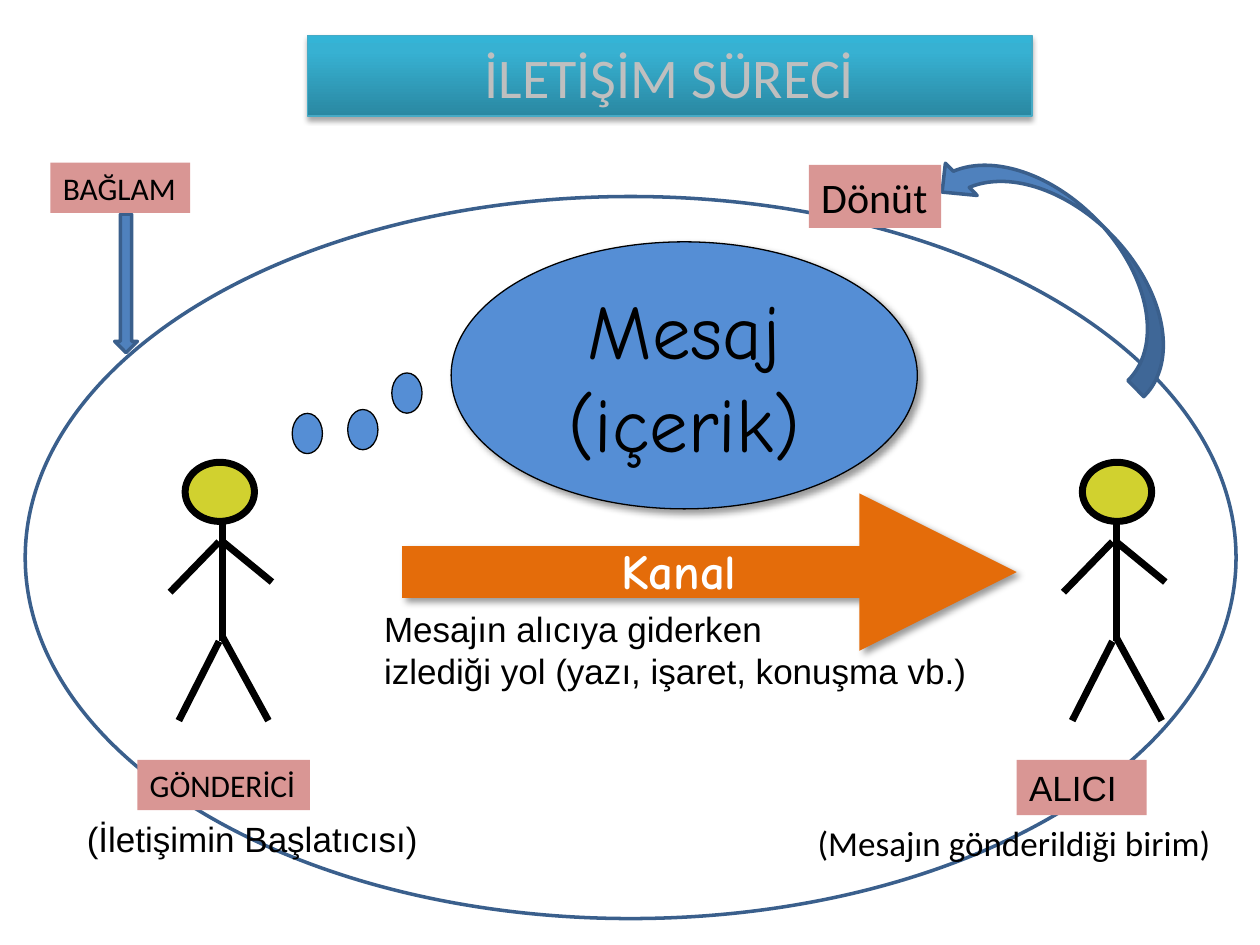
import lxml.etree
import pptx
import pptx.dml.color
import pptx.enum.dml
import pptx.enum.shapes
import pptx.enum.text
import pptx.oxml
import pptx.oxml.ns
import pptx.util

Pt = pptx.util.Pt
SHAPES = pptx.enum.shapes.MSO_SHAPE
ANCHOR = pptx.enum.text.MSO_ANCHOR
ALIGN = pptx.enum.text.PP_ALIGN
qn = pptx.oxml.ns.qn

BLACK = "000000"
PINK = "D99694"
BLUE = "558ED5"
OUTLINE = "3A5F8C"
SOFT_SHADOW = (40, 4, 3, 45)
LIMBS = [
    (0, 298, 0, 366.5),
    (0, 309.6, 28, 332.6),
    (-2.2, 309.6, -30.2, 338.4),
    (0, 364.3, 26, 411.8),
    (-2.2, 366.5, -25.2, 411.8),
]


def color(value):
    return pptx.dml.color.RGBColor.from_string(value)


def add_element(parent, tag, **attributes):
    values = {name: str(value) for name, value in attributes.items()}
    return lxml.etree.SubElement(parent, qn(tag), values)


def add_color(parent, value):
    return add_element(parent, "a:srgbClr", val=value)


def add_shadow(effects, opacity, blur, distance, angle):
    shadow = add_element(effects, "a:outerShdw", blurRad=Pt(blur), dist=Pt(distance),
                         dir=angle * 60000, rotWithShape=0)
    add_element(add_color(shadow, BLACK), "a:alpha", val=opacity * 1000)


def add_shape(slide, kind, box, fill=None, line=None, width=0.75, shadow=None):
    shape = slide.shapes.add_shape(kind, *map(Pt, box))
    shape.shadow.inherit = False
    if fill:
        shape.fill.solid()
        shape.fill.fore_color.rgb = color(fill)
    else:
        shape.fill.background()
    if line:
        shape.line.color.rgb = color(line)
        shape.line.width = Pt(width)
    else:
        shape.line.fill.background()
    if shadow:
        add_shadow(shape._element.spPr.find(qn("a:effectLst")), *shadow)
    return shape


def add_line(slide, points, line, width, arrow=False, shadow=None):
    connector = slide.shapes.add_connector(
        pptx.enum.shapes.MSO_CONNECTOR.STRAIGHT, *map(Pt, points))
    connector.line.color.rgb = color(line)
    connector.line.width = Pt(width)
    if arrow:
        add_element(connector.line._get_or_add_ln(), "a:tailEnd", type="triangle")
    effects = add_element(connector._element.spPr, "a:effectLst")
    if shadow:
        add_shadow(effects, *shadow)


def write_text(shape, lines, size, font="Calibri", text_color=BLACK, bold=False,
               align=ALIGN.LEFT, anchor=ANCHOR.TOP, wrap=False):
    frame = shape.text_frame
    frame.word_wrap = wrap
    frame.vertical_anchor = anchor
    formats = {"name": font, "size": Pt(size), "bold": bold}
    for index, line in enumerate(lines):
        paragraph = frame.add_paragraph() if index else frame.paragraphs[0]
        paragraph.alignment = align
        run = paragraph.add_run()
        run.text = line
        for name, value in formats.items():
            setattr(run.font, name, value)
        run.font.color.rgb = color(text_color)


def add_text(slide, box, lines, size, **options):
    write_text(slide.shapes.add_textbox(*map(Pt, box)), lines, size, **options)


def add_label(slide, box, text, size, **options):
    write_text(add_shape(slide, SHAPES.RECTANGLE, box, PINK), [text], size, **options)


def add_person(slide, head_left, neck):
    add_shape(slide, SHAPES.OVAL, (head_left, 264.2, 39.6, 33.8), "D1D12F", BLACK, 4)
    for x1, y1, x2, y2 in LIMBS:
        add_line(slide, (neck + x1, y1, neck + x2, y2), BLACK, 4)


def add_title(slide):
    shape = add_shape(slide, SHAPES.RECTANGLE, (175.7, 20.2, 414, 46.1), None,
                      "46AAC5", 0.75, (35, 3.1, 1.8, 90))
    shape.fill.gradient()
    shape.fill.gradient_angle = 90
    stops = shape._element.spPr.find(".//" + qn("a:gsLst"))
    for stop in list(stops):
        stops.remove(stop)
    for position, value in [(0, "2A88A2"), (80, "37B1D2"), (100, "34B4D6")]:
        add_color(add_element(stops, "a:gs", pos=position * 1000), value)
    write_text(shape, ["İLETİŞİM SÜRECİ"], 32, text_color="BFBFBF",
               align=ALIGN.CENTER, anchor=ANCHOR.MIDDLE, wrap=True)
    properties = shape.text_frame.paragraphs[0].runs[0].font._element
    outline = add_element(properties, "a:ln", w=Pt(1.45))
    add_color(add_element(outline, "a:solidFill"), "FFFFFF")
    properties.insert(0, outline)


def add_message(slide):
    for left, top in [(167, 236.2), (198.7, 234), (223.9, 213.1)]:
        add_shape(slide, SHAPES.OVAL, (left, top, 17.3, 23), BLUE, BLACK)
    bubble = add_shape(slide, SHAPES.OVAL, (257.8, 138.2, 266.4, 152.6), BLUE, BLACK,
                       shadow=SOFT_SHADOW)
    write_text(bubble, ["Mesaj", "(içerik)"], 44, font="Comic Neue",
               align=ALIGN.CENTER, anchor=ANCHOR.MIDDLE)


def main():
    presentation = pptx.Presentation()
    presentation.slide_width = Pt(720)
    presentation.slide_height = Pt(540)
    slide = presentation.slides.add_slide(presentation.slide_layouts[6])

    add_shape(slide, SHAPES.OVAL, (14.4, 112.3, 691.9, 412.6), None, OUTLINE, 2)
    add_person(slide, 105.8, 127.4)
    add_person(slide, 618.5, 637.9)
    add_line(slide, (229.7, 326.9, 581, 326.9), "E46C0A", 30, True, SOFT_SHADOW)
    add_message(slide)
    add_text(slide, (42.5, 463.7, 205.2, 31.7), ["(İletişimin Başlatıcısı)"], 20,
             font="Arial")
    add_label(slide, (581, 434.2, 74.2, 31.7), "ALICI", 20, font="Arial", wrap=True)
    add_text(slide, (347.8, 305.3, 97.2, 41), ["Kanal"], 28, font="Comic Neue",
             text_color="FFFFFF", bold=True)
    add_text(slide, (212.4, 343.4, 360, 55.4),
             ["Mesajın alıcıya giderken", "izlediği yol (yazı, işaret, konuşma vb.)"],
             20, font="Arial")
    add_title(slide)
    feedback = add_shape(slide, SHAPES.CURVED_UP_ARROW, (521.3, 119.5, 177.1, 51.8),
                         "4F81BD", OUTLINE, 2)
    feedback.rotation = 225.4
    add_label(slide, (462.2, 94.3, 75.6, 36), "Dönüt", 24)
    add_text(slide, (460.1, 465.8, 241.2, 31.7), ["(Mesajın gönderildiği birim)"], 20)
    add_label(slide, (78.5, 434.2, 98.6, 28.8), "GÖNDERİCİ", 18)
    add_shape(slide, SHAPES.DOWN_ARROW, (65.5, 122.4, 13, 79.2), "4F81BD", OUTLINE, 2)
    add_label(slide, (28.8, 92.9, 79.9, 28.8), "BAĞLAM", 18)
    presentation.save("out.pptx")


if __name__ == "__main__":
    main()
